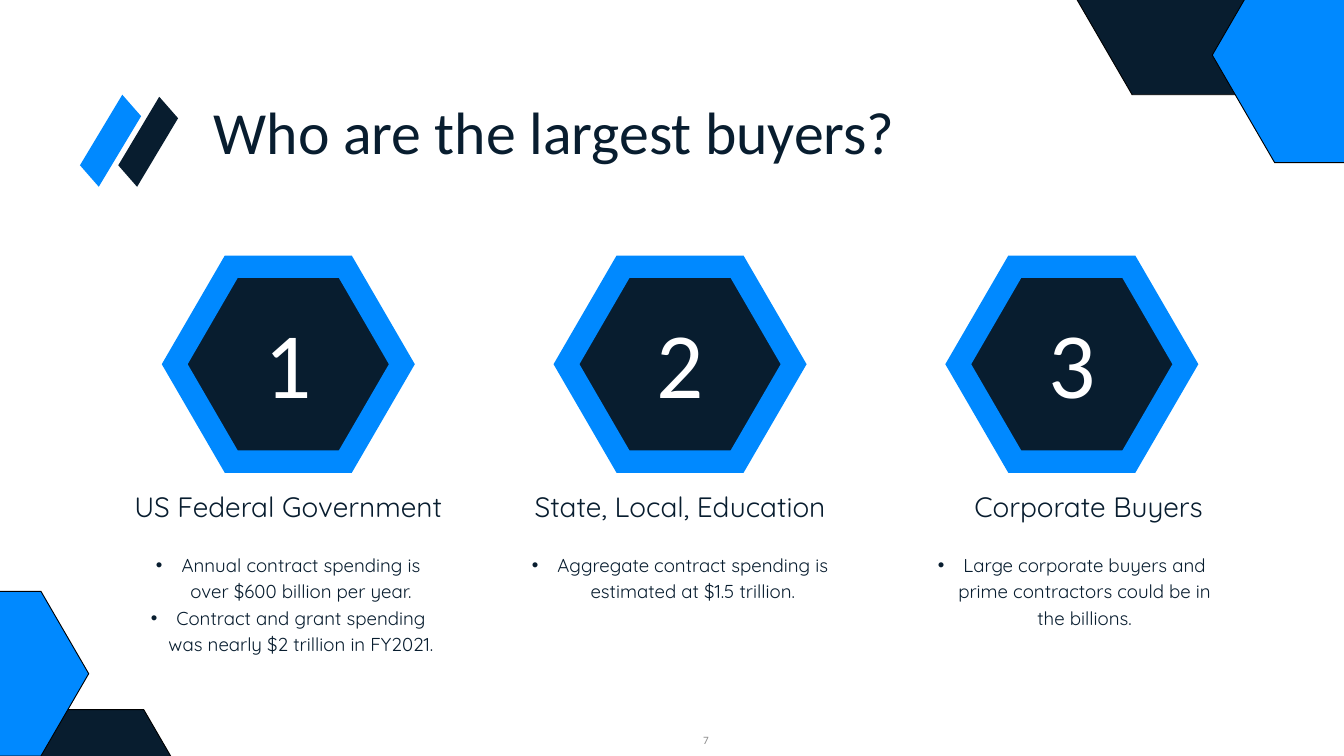
import pptx
import pptx.util
import pptx.dml.color
import pptx.enum.shapes
import pptx.enum.text
import pptx.oxml.ns
import lxml.etree

Inches, Pt = pptx.util.Inches, pptx.util.Pt
RGBColor = pptx.dml.color.RGBColor
ALIGN = pptx.enum.text.PP_ALIGN
ANCHOR = pptx.enum.text.MSO_ANCHOR

NAVY = RGBColor(0x08, 0x1D, 0x2F)
BLUE = RGBColor(0x00, 0x89, 0xFF)
WHITE = RGBColor(0xFF, 0xFF, 0xFF)
BLACK = RGBColor(0x00, 0x00, 0x00)
GREY = RGBColor(0x8C, 0x8C, 0x8C)

TITLE = "Who are the largest buyers?"
PAGE = "7"
# heading, shift of the heading from the column centre, bullets
BUYERS = [
    ("US Federal Government", 0, [
        "Annual contract spending is over $600 billion per year.",
        "Contract and grant spending was nearly $2 trillion in FY2021."]),
    ("State, Local, Education", 0, [
        "Aggregate contract spending is estimated at $1.5 trillion."]),
    ("Corporate Buyers", 0.25, [
        "Large corporate buyers and prime contractors could be in the billions."]),
]
# left, top, width, height, fill
CORNERS = [
    (16.01, -1.48, 3.34, 2.89, NAVY),
    (18.04, -0.78, 3.7, 3.2, BLUE),
    (0.23, 10.56, 2.55, 2.21, NAVY),
    (-1.51, 8.8, 2.83, 2.45, BLUE),
]
# left, run, rise (hundredths of an inch), fill
BARS = [(176, 61, 102, NAVY), (119, 63, 105, BLUE)]
BAR_Y, CUT_X, CUT_Y = 246, 28, 32

FIRST, PITCH = 4.29, 5.83   # column centres
HEX_W, HEX_H, HEX_Y = 3.38, 2.9, 3.97
HEX_ADJ = 0.29

HEAD = {"size": Pt(64), "name": "Calibri", "color": NAVY}
DIGIT = {"size": Pt(100), "name": "Calibri", "color": WHITE}
LABEL = {"size": Pt(30), "name": "Quicksand", "color": NAVY}
BODY = {"size": Pt(20), "name": "Quicksand", "color": NAVY, "bold": False}
FOOT = {"size": Pt(12), "name": "Calibri", "color": GREY}


def add_bullet(para):
    props = para._p.get_or_add_pPr()
    props.set("marL", str(Inches(0.38)))
    props.set("indent", str(-Inches(0.38)))
    font = lxml.etree.SubElement(props, pptx.oxml.ns.qn("a:buFont"))
    font.set("typeface", "Arial")
    mark = lxml.etree.SubElement(props, pptx.oxml.ns.qn("a:buChar"))
    mark.set("char", "•")


def write(shape, box, lines, style, lead=None, align=ALIGN.CENTER,
          anchor=ANCHOR.TOP, bullet=False):
    """Place a text shape and fill it, one paragraph a line."""
    for key, value in zip(("left", "top", "width", "height"), box):
        setattr(shape, key, Inches(value))
    frame = shape.text_frame
    frame.text = "\n".join(lines)
    settings = {"margin_left": 0, "margin_right": 0, "margin_top": 0,
                "margin_bottom": 0, "word_wrap": True, "vertical_anchor": anchor,
                "auto_size": pptx.enum.text.MSO_AUTO_SIZE.NONE}
    for key, value in settings.items():
        setattr(frame, key, value)
    for para in frame.paragraphs:
        para.alignment = align
        para.space_before = Pt(0)
        if lead:
            para.line_spacing = Pt(lead)
        if bullet:
            add_bullet(para)
        for key, value in style.items():
            if key == "color":
                para.font.color.rgb = value
            else:
                setattr(para.font, key, value)


def add_text(slide, box, text, style, **options):
    shape = slide.shapes.add_textbox(0, 0, 0, 0)
    write(shape, box, [text], style, **options)


def paint(shape, fill, line=None, weight=0):
    shape.shadow.inherit = False
    shape.fill.solid()
    shape.fill.fore_color.rgb = fill
    if line is None:
        shape.line.fill.background()
        return
    shape.line.color.rgb = line
    shape.line.width = Pt(weight)
    join = lxml.etree.SubElement(shape.line._ln, pptx.oxml.ns.qn("a:miter"))
    join.set("lim", "800000")


def add_hex(slide, box, *colours):
    kind = pptx.enum.shapes.MSO_SHAPE.HEXAGON
    shape = slide.shapes.add_shape(kind, *map(Inches, box))
    shape.adjustments[0] = HEX_ADJ
    paint(shape, *colours)


def add_bar(slide, left, run, rise, fill):
    pen = slide.shapes.build_freeform(left, BAR_Y, scale=Inches(0.01))
    pen.add_line_segments([
        (left + run, BAR_Y - rise),
        (left + run + CUT_X, BAR_Y - rise + CUT_Y),
        (left + CUT_X, BAR_Y + CUT_Y)])
    paint(pen.convert_to_shape(), fill)


def main():
    deck = pptx.Presentation()
    deck.slide_width, deck.slide_height = Inches(20), Inches(11.25)
    slide = deck.slides.add_slide(deck.slide_layouts.get_by_name("Comparison"))
    title = slide.shapes.title
    bodies = [s for s in slide.placeholders if s.placeholder_format.idx in (1, 2, 3, 4)]

    write(title, (3.18, 1.51, 12.32, 0.98), [TITLE], HEAD,
          lead=69.8, align=ALIGN.LEFT)
    for i, (name, shift, points) in enumerate(BUYERS):
        mid = FIRST + i * PITCH
        add_hex(slide, (mid - HEX_W / 2, HEX_Y, HEX_W, HEX_H), NAVY, BLUE, 24)
        add_text(slide, (mid - 0.6, 4.73, 1.2, 1.53), str(i + 1), DIGIT, lead=106)
        add_text(slide, (mid + shift - 2.7, 7.2, 5.4, 0.55), name, LABEL, lead=42)
        write(bodies[i], (mid - 2.23, 8.19, 4.46, 1.94), points, BODY,
              lead=28, bullet=True)
    for spare in bodies[len(BUYERS):]:
        spare.element.getparent().remove(spare.element)

    for *box, fill in CORNERS:
        add_hex(slide, box, fill, BLACK, 1)
    for bar in BARS:
        add_bar(slide, *bar)
    add_text(slide, (9.34, 10.81, 2.33, 0.4), PAGE, FOOT, anchor=ANCHOR.MIDDLE)
    deck.save("out.pptx")


if __name__ == "__main__":
    main()
